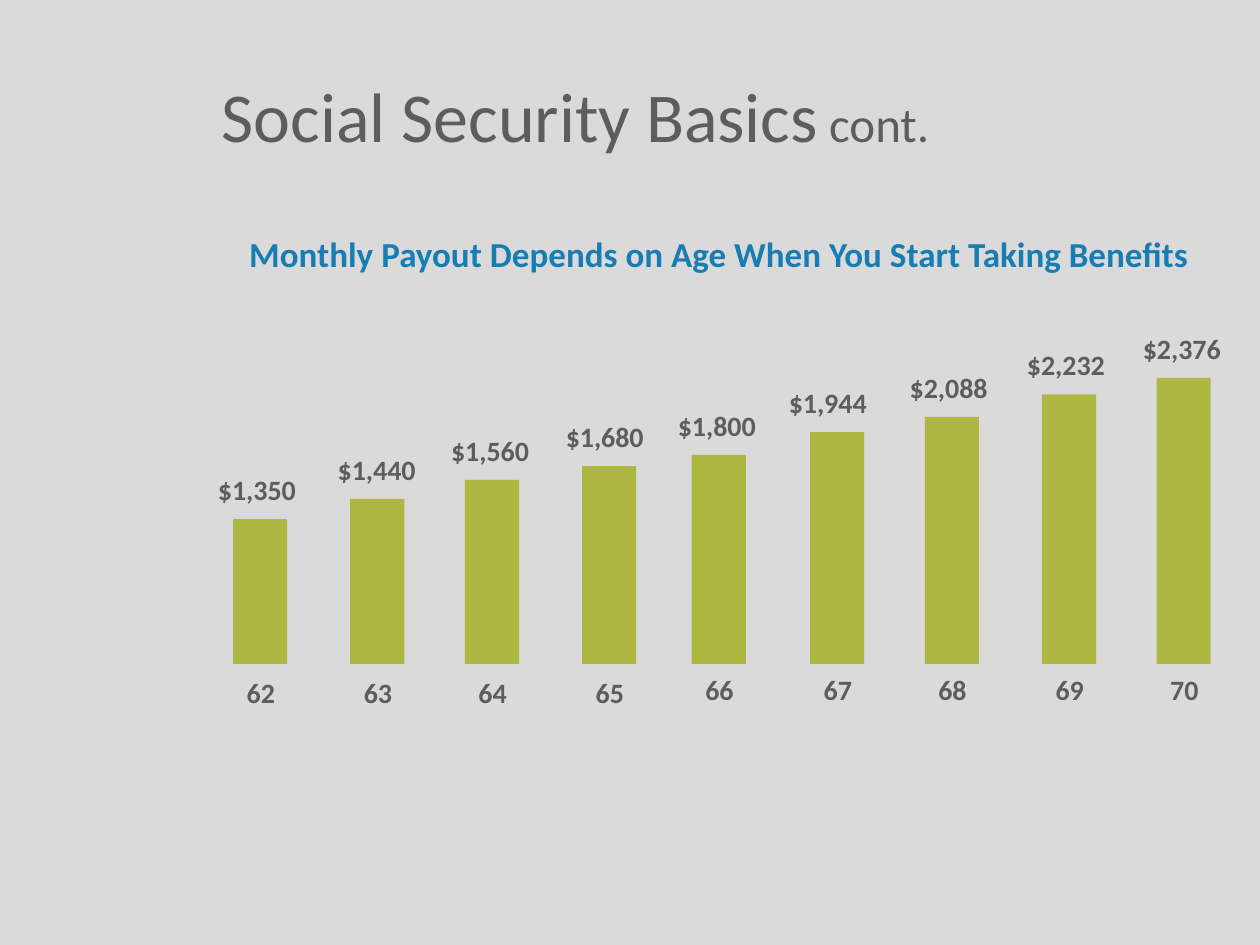
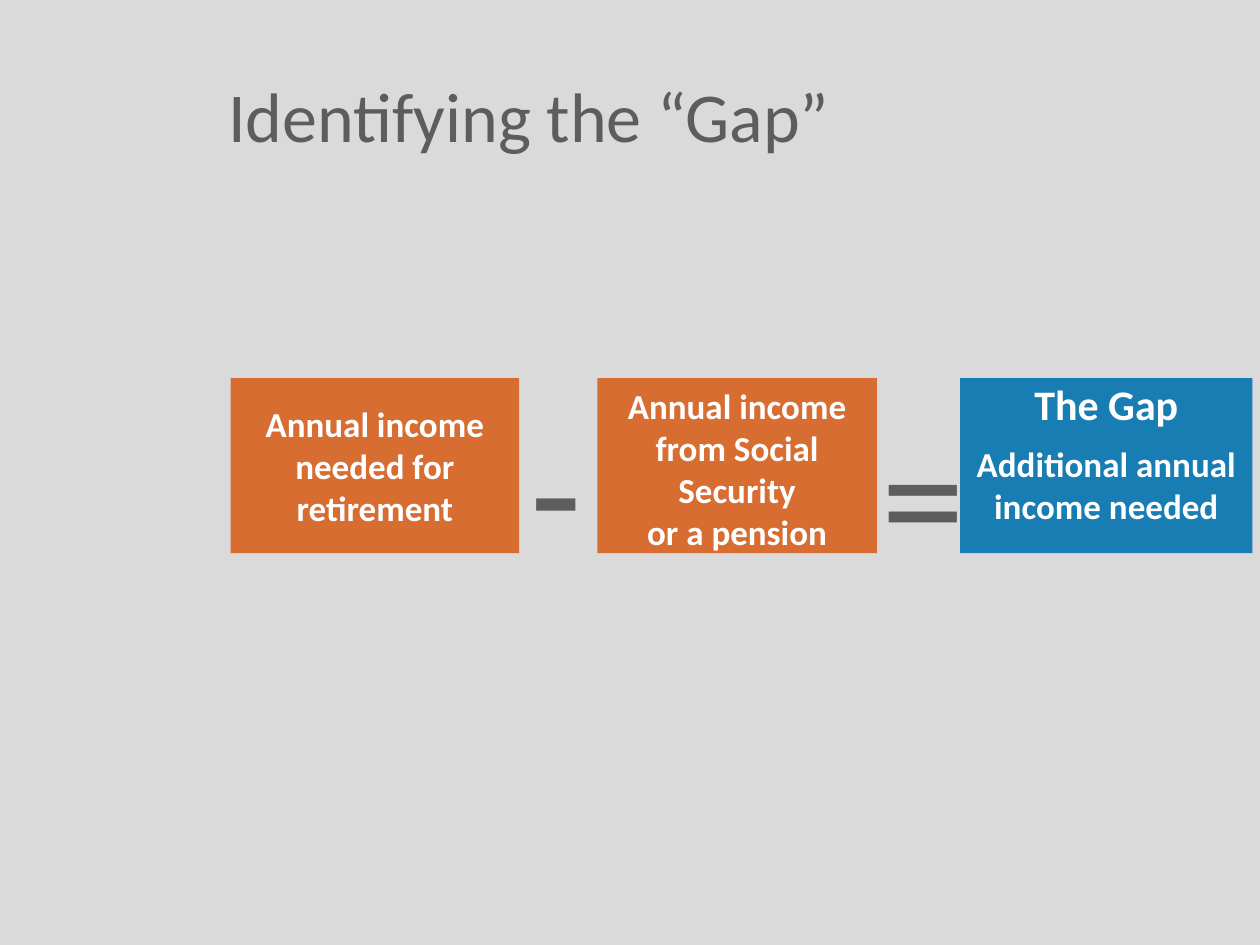
from pptx import Presentation
from pptx.dml.color import RGBColor
from pptx.enum.shapes import MSO_SHAPE as Shape
from pptx.enum.text import MSO_ANCHOR as Anchor, MSO_AUTO_SIZE as AutoSize, PP_ALIGN as Align
from pptx.util import Inches, Pt

COLORS = {
    "background": "DADADA",
    "text": "5D5D5D",
    "blue": "177DB3",
    "green": "AFB743",
    "orange": "D76D31",
    "white": "FFFFFF",
}
FONT = "Calibri"
TITLE_ONLY = 5


def rgb(name):
    return RGBColor.from_string(COLORS[name])


class Deck:
    """Holds the shared style and the current slide."""

    def __init__(self):
        self.prs = Presentation()
        self.prs.slide_width, self.prs.slide_height = Inches(10), Inches(7.5)
        backdrop = self.prs.slide_master.background.fill
        backdrop.solid()
        backdrop.fore_color.rgb = rgb("background")
        self.slide = None

    def new_slide(self, left, *title_runs):
        """Start a slide; title_runs are (text, size) pairs."""
        self.slide = self.prs.slides.add_slide(self.prs.slide_layouts[TITLE_ONLY])
        title = self.slide.shapes.title
        title.left, title.top = Inches(left), Inches(0.58)
        title.width, title.height = Inches(8.9), Inches(0.66)
        self.format_frame(title.text_frame, vertical_anchor=Anchor.MIDDLE)
        line = title.text_frame.paragraphs[0]
        line.alignment = Align.LEFT
        for text, size in title_runs:
            run = line.add_run()
            run.text = text
            self.format_font(run.font, size, "text", bold=False)

    def format_frame(self, frame, **extra):
        values = {"word_wrap": True, "auto_size": AutoSize.NONE, **extra}
        for name, value in values.items():
            setattr(frame, name, value)

    def format_font(self, font, size, color, bold=True):
        for name, value in {"name": FONT, "size": Pt(size), "bold": bold}.items():
            setattr(font, name, value)
        font.color.rgb = rgb(color)

    def add_lines(self, frame, lines, color, align, bold=True):
        """Fill a frame; lines are (text, size, space before) triples."""
        for index, (text, size, gap) in enumerate(lines):
            line = frame.add_paragraph() if index else frame.paragraphs[0]
            line.text = text
            line.alignment = align
            if gap:
                line.space_before = Pt(gap)
            for run in line.runs:
                self.format_font(run.font, size, color, bold)

    def label(self, text, box, size, color="text", align=Align.CENTER, bold=True):
        frame = self.slide.shapes.add_textbox(*map(Inches, box)).text_frame
        self.format_frame(frame)
        self.add_lines(frame, [(text, size, 0)], color, align, bold)

    def block(self, box, color, lines=(), **frame_format):
        rect = self.slide.shapes.add_shape(Shape.RECTANGLE, *map(Inches, box))
        rect.shadow.inherit = False
        rect.fill.solid()
        rect.fill.fore_color.rgb = rgb(color)
        rect.line.fill.background()
        if lines:
            self.format_frame(rect.text_frame, **frame_format)
            self.add_lines(rect.text_frame, lines, "white", Align.CENTER)


def payout_slide(deck):
    deck.new_slide(1.66, ("Social Security Basics", 40), (" cont.", 28))
    deck.label("Monthly Payout Depends on Age When You Start Taking Benefits",
               (1.88, 1.8, 7.94, 0.44), 20, "blue", Align.LEFT)

    # Age, payout, bar left, bar top, payout label left
    payouts = [
        (62, 1350, 1.85, 4.12, 1.56),
        (63, 1440, 2.78, 3.96, 2.51),
        (64, 1560, 3.69, 3.81, 3.41),
        (65, 1680, 4.62, 3.7, 4.32),
        (66, 1800, 5.49, 3.61, 5.21),
        (67, 1944, 6.43, 3.43, 6.09),
        (68, 2088, 7.34, 3.31, 7.05),
        (69, 2232, 8.27, 3.13, 7.98),
        (70, 2376, 9.18, 3, 8.9),
    ]
    baseline = 5.27
    for age, payout, left, top, payout_left in payouts:
        deck.block((left, top, 0.43, baseline - top), "green")
        deck.label(f"${payout:,}", (payout_left, top - 0.42, 0.96, 0.39), 16)
        age_top = 5.31 if age < 66 else 5.29
        deck.label(str(age), (left - 0.08, age_top, 0.6, 0.39), 16)


def gap_slide(deck):
    deck.new_slide(1.71, ("Identifying the “Gap”", 40))

    # Terms of the equation
    top, height = 3, 1.39
    deck.block((1.83, top, 2.29, height), "orange",
               [("Annual income needed for retirement", 20, 0)],
               vertical_anchor=Anchor.MIDDLE)
    deck.block((4.74, top, 2.22, height), "orange",
               [("Annual income from Social Security\vor a pension", 20, 0)],
               vertical_anchor=Anchor.TOP)
    deck.block((7.62, top, 2.32, height), "blue",
               [("The Gap", 24, 0), ("Additional annual income needed", 20, 8)],
               vertical_anchor=Anchor.TOP, margin_top=0)

    # Operators between them
    for sign, left, sign_top in (("-", 4.11, 3), ("=", 6.9, 3.04)):
        deck.label(sign, (left, sign_top, 0.68, 1.55), 96, align=Align.LEFT, bold=False)


def main():
    deck = Deck()
    payout_slide(deck)
    gap_slide(deck)
    deck.prs.save("out.pptx")


if __name__ == "__main__":
    main()
